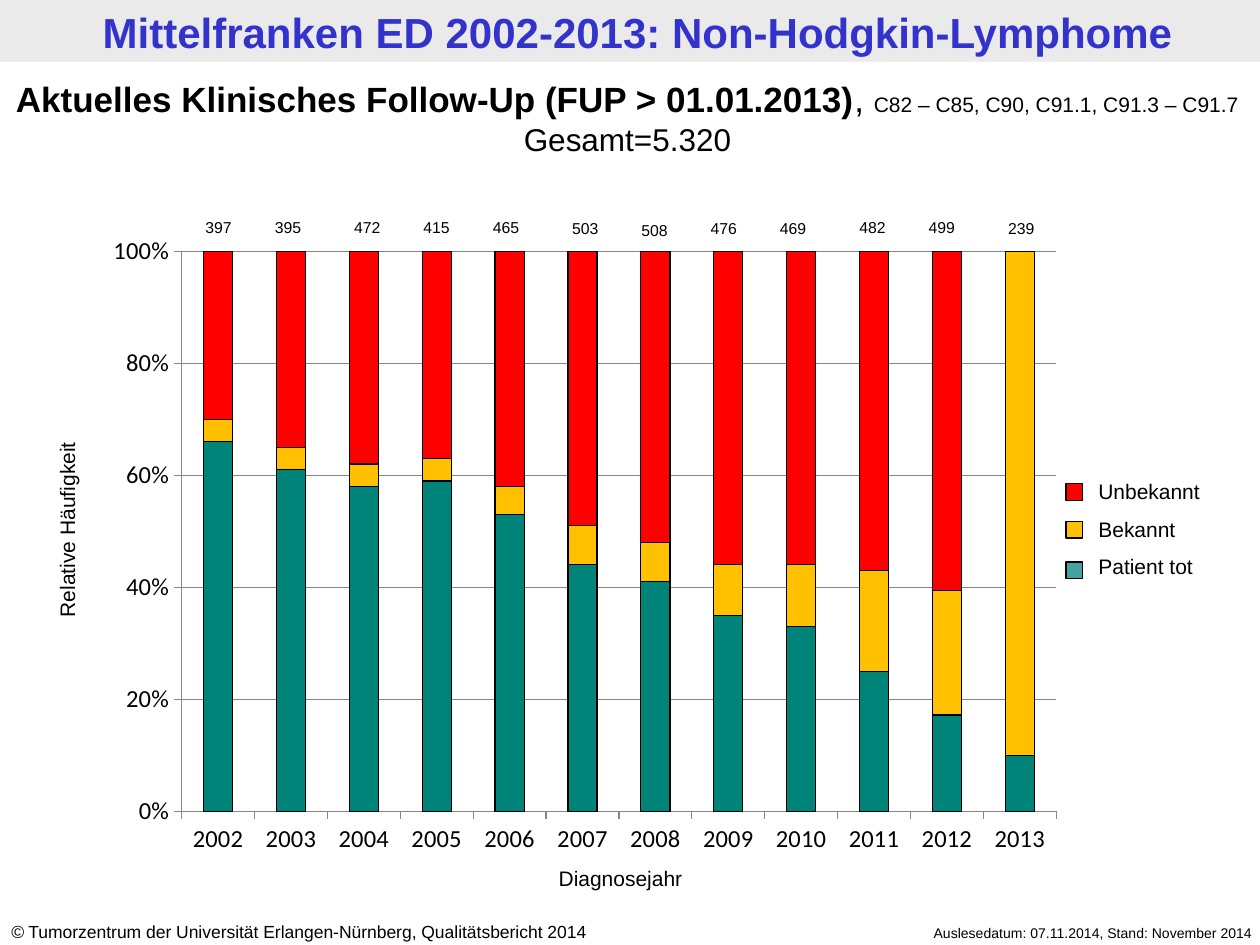
from lxml import etree
from pptx import Presentation
from pptx import util as u
from pptx.chart.data import CategoryChartData
from pptx.dml.color import RGBColor
from pptx.enum import chart as ch, shapes, text
from pptx.oxml import parse_xml
from pptx.oxml.ns import nsdecls, qn

Pt = u.Pt
LEFT, CENTER, RIGHT = text.PP_ALIGN.LEFT, text.PP_ALIGN.CENTER, text.PP_ALIGN.RIGHT
BLACK = RGBColor(0, 0, 0)
BLUE = RGBColor(0x33, 0x33, 0xCC)
BAND = RGBColor(0xEA, 0xEA, 0xEA)
GRID = RGBColor(0x86, 0x86, 0x86)
RED = RGBColor(0xFF, 0, 0)
AMBER = RGBColor(0xFF, 0xC0, 0)
TEAL = RGBColor(0, 0x83, 0x78)
LEGEND_TEAL = RGBColor(0, 0x83, 0x80)

YEARS = [str(year) for year in range(2002, 2014)]
SERIES = [
    ("Patient tot", TEAL, (66, 61, 58, 59, 53, 44, 41, 35, 33, 25, 17, 10)),
    ("Bekannt", AMBER, (4, 4, 4, 4, 5, 7, 7, 9, 11, 18, 22, 90)),
    ("Unbekannt", RED, (30, 35, 38, 37, 42, 49, 52, 56, 56, 57, 60, 0)),
]
# Cases per year: count, left, top
CASES = [
    (397, 105, 121), (395, 144.7, 121), (472, 190, 121), (415, 229.7, 121),
    (465, 269.3, 121), (503, 314.6, 121.7), (508, 354.2, 122.4),
    (476, 393.8, 121.7), (469, 433.4, 121.7), (482, 478.8, 121),
    (499, 518.4, 121), (239, 563.8, 121.7),
]


def add_text(slide, box, paragraphs, align=LEFT, space=0, rotation=0, insets=None):
    """Each paragraph is a list of runs (text, size, format dict)."""
    sp = slide.shapes.add_textbox(*map(Pt, box))
    sp.rotation = rotation
    tf = sp.text_frame
    tf.word_wrap = True
    tf.auto_size = text.MSO_AUTO_SIZE.SHAPE_TO_FIT_TEXT
    if insets:
        tf.margin_left = tf.margin_right = Pt(insets[0])
        tf.margin_top = tf.margin_bottom = Pt(insets[1])
    for i, runs in enumerate(paragraphs):
        p = tf.add_paragraph() if i else tf.paragraphs[0]
        p.alignment = align
        if i and space:
            p.space_before = Pt(space)
        for words, size, style in runs:
            r = p.add_run()
            r.text = words
            r.font.name = "Arial"
            r.font.size = Pt(size)
            r.font.bold = style.get("bold", False)
            r.font.italic = style.get("italic", False)
            r.font.color.rgb = style.get("color", BLACK)


def add_box(slide, box, color, outlined=True, opacity=100):
    sp = slide.shapes.add_shape(shapes.MSO_SHAPE.RECTANGLE, *map(Pt, box))
    sp.shadow.inherit = False
    sp.fill.solid()
    sp.fill.fore_color.rgb = color
    if opacity < 100:
        clr = sp.fill._xPr.find(qn("a:solidFill"))[0]
        etree.SubElement(clr, qn("a:alpha")).set("val", str(opacity * 1000))
    if outlined:
        outline(sp.line, BLACK)
    else:
        sp.line.fill.background()


def outline(line, color):
    line.color.rgb = color
    line.width = Pt(0.75)


def fix_plot_area(chart, x, y, w, h):
    """Place the inner plot area by fractions of the chart."""
    area = chart._chartSpace.chart.plotArea
    for old in area.findall(qn("c:layout")):
        area.remove(old)
    sizes = "".join(f'<c:{k} val="{v}"/>' for k, v in zip("xywh", (x, y, w, h)))
    area.insert(0, parse_xml(
        f'<c:layout {nsdecls("c")}><c:manualLayout><c:layoutTarget val="inner"/>'
        f'<c:xMode val="edge"/><c:yMode val="edge"/>{sizes}'
        '</c:manualLayout></c:layout>'))


def add_follow_up_chart(slide, box):
    data = CategoryChartData()
    data.categories = YEARS
    for name, _, values in SERIES:
        data.add_series(name, values)
    chart = slide.shapes.add_chart(
        ch.XL_CHART_TYPE.COLUMN_STACKED_100, *map(Pt, box), data).chart
    chart.has_legend = False
    chart.has_title = False
    chart.font.name = "Calibri"
    chart.font.size = Pt(18)
    chart.font.color.rgb = BLACK
    plot = chart.plots[0]
    plot.gap_width, plot.overlap, plot.vary_by_categories = 150, 100, False
    for series, (_, color, _) in zip(plot.series, SERIES):
        series.format.fill.solid()
        series.format.fill.fore_color.rgb = color
        outline(series.format.line, BLACK)
    for axis in (chart.category_axis, chart.value_axis):
        axis.major_tick_mark = ch.XL_TICK_MARK.OUTSIDE
        axis.minor_tick_mark = ch.XL_TICK_MARK.NONE
        axis.tick_labels.font.size = Pt(14)
        outline(axis.format.line, GRID)
    axis = chart.value_axis
    axis.minimum_scale, axis.maximum_scale, axis.major_unit = 0, 1, 0.2
    axis.has_major_gridlines = True
    outline(axis.major_gridlines.format.line, GRID)
    axis.tick_labels.number_format = "0%"
    axis.tick_labels.number_format_is_linked = False
    fix_plot_area(chart, 0.09, 0.04, 0.89, 0.87)


def add_legend(slide):
    names = [[(name, 12, {})] for name, _, _ in reversed(SERIES)]
    add_text(slide, (620.6, 270, 102, 65.5), names, space=7)
    for top, color, opacity in (
            (276.5, RED, 100), (298.1, AMBER, 100), (321.1, LEGEND_TEAL, 74)):
        add_box(slide, (609.1, top, 9.4, 9.4), color, opacity=opacity)


def main():
    prs = Presentation()
    prs.slide_width, prs.slide_height = Pt(720), Pt(540)
    slide = prs.slides.add_slide(prs.slide_layouts[6])

    add_box(slide, (0, 0, 720, 35.3), BAND, outlined=False)
    add_text(slide, (4.3, 0.7, 720, 35.3),
             [[("Mittelfranken ED 2002-2013: Non-Hodgkin-Lymphome", 24,
                {"bold": True, "color": BLUE})]], CENTER, insets=(6.5, 3))
    add_text(slide, (478.8, 525, 244, 17),
             [[("Auslesedatum: 07.11.2014, Stand: November 2014", 8, {})]], RIGHT)
    add_text(slide, (-0.7, 522.7, 377, 19.4),
             [[("©", 10, {"italic": True}),
               (" Tumorzentrum der Universität Erlangen-Nürnberg, "
                "Qualitätsbericht 2014", 10, {})]])

    add_follow_up_chart(slide, (53.3, 128.9, 561.6, 367.9))
    add_text(slide, (-48.2, 291.6, 173.5, 22.3), [[("Relative Häufigkeit", 12, {})]],
             CENTER, rotation=270, insets=(8, 3.6))
    add_text(slide, (273.6, 491, 162, 22.3), [[("Diagnosejahr", 12, {})]],
             CENTER, insets=(8, 3.6))
    add_text(slide, (-2.9, 41, 723, 53.3),
             [[("Aktuelles Klinisches Follow-Up (FUP > 01.01.2013)", 20, {"bold": True}),
               (", ", 20, {}),
               ("C82 – C85, C90, C91.1, C91.3 – C91.7", 12, {})],
              [("Gesamt=5.320", 18, {})]], CENTER)
    for count, left, top in CASES:
        add_text(slide, (left, top, 39.6, 18), [[(str(count), 9, {})]], CENTER)
    add_legend(slide)
    prs.save("out.pptx")


if __name__ == "__main__":
    main()
